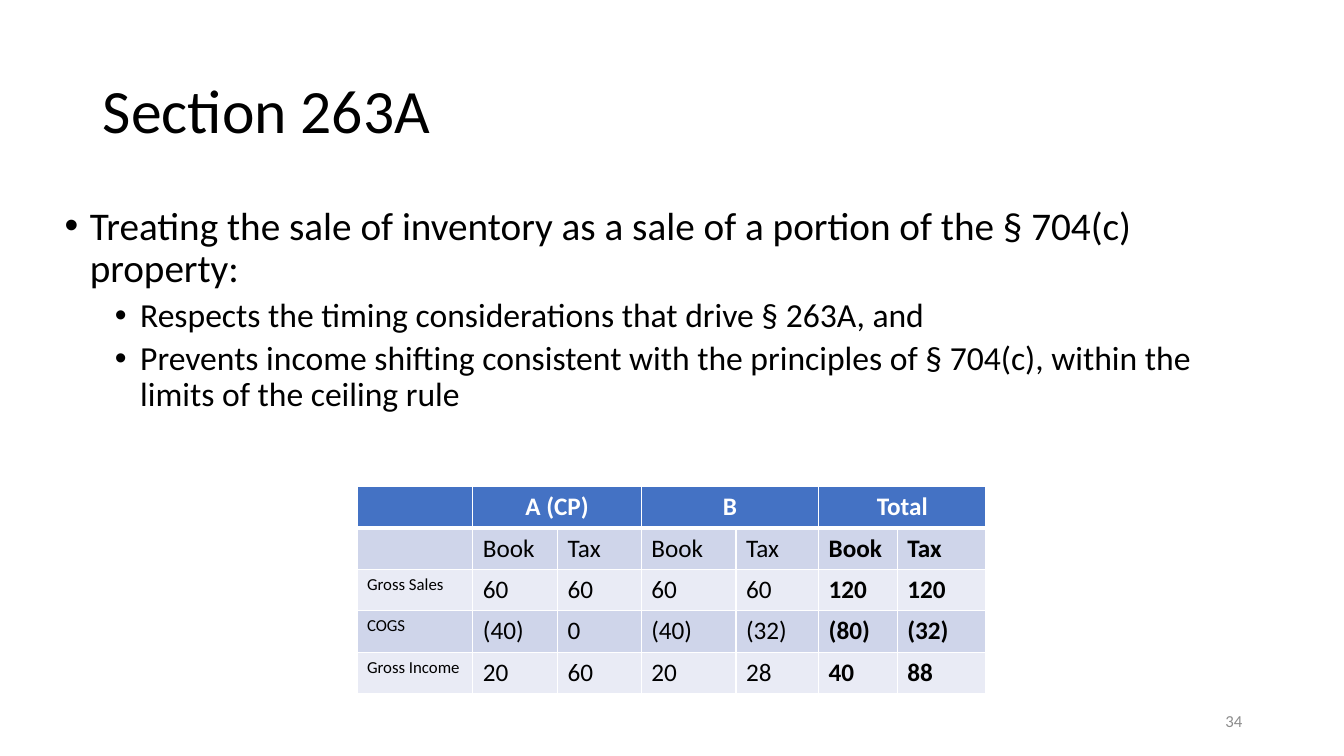
from dataclasses import dataclass

from lxml import etree
from pptx import Presentation
from pptx import util as u
from pptx.dml.color import RGBColor
from pptx.enum import text
from pptx.oxml import ns


@dataclass(frozen=True)
class Theme:
    font: str = "Calibri"
    ink: str = "000000"
    white: str = "FFFFFF"
    muted: str = "8C8C8C"
    header: str = "4472C4"
    bands: tuple = ("CFD5EA", "E9EBF5")
    title: int = 44
    levels: tuple = (28, 24)
    cell: int = 18
    small: int = 12


THEME = Theme()
ALIGN = text.PP_ALIGN

BULLETS = [
    (0, "Treating the sale of inventory as a sale of a portion of the § 704(c) property:"),
    (1, "Respects the timing considerations that drive § 263A, and"),
    (1, "Prevents income shifting consistent with the principles of § 704(c), "
        "within the limits of the ceiling rule"),
]
COLUMNS = [115, 84, 83, 94, 82, 78, 88]
ROW_HEIGHT = 41
ROWS = [
    ["", "A (CP)", "", "B", "", "Total", ""],
    ["", "Book", "Tax", "Book", "Tax", "Book", "Tax"],
    ["Gross Sales", "60", "60", "60", "60", "120", "120"],
    ["COGS", "(40)", "0", "(40)", "(32)", "(80)", "(32)"],
    ["Gross Income", "20", "60", "20", "28", "40", "88"],
]


def px(n):
    """Convert px, at 100 to the inch, into EMU."""
    return u.Emu(n * 9144)


def place(sp, left, top, width, height):
    sp.left, sp.top, sp.width, sp.height = map(px, (left, top, width, height))


def style(p, size, color=THEME.ink, bold=False, align=ALIGN.LEFT):
    p.alignment = align
    for r in p.runs:
        r.font.name = THEME.font
        r.font.size = u.Pt(size)
        r.font.bold = bold
        r.font.color.rgb = RGBColor.from_string(color)


def set_bullet(p, margin, hanging):
    pPr = p._p.get_or_add_pPr()
    pPr.set("marL", str(px(margin)))
    pPr.set("indent", str(px(-hanging)))
    etree.SubElement(pPr, ns.qn("a:buFont"), typeface="Arial")
    etree.SubElement(pPr, ns.qn("a:buChar"), char="•")


def add_title(s, words):
    sp = s.shapes.title
    place(sp, 92, 40, 1150, 145)
    tf = sp.text_frame
    tf.text = words
    tf.auto_size = text.MSO_AUTO_SIZE.NONE
    tf.vertical_anchor = text.MSO_ANCHOR.MIDDLE
    tf.paragraphs[0].line_spacing = 0.9
    style(tf.paragraphs[0], THEME.title)


def add_bullets(s, items):
    sp = s.placeholders[1]
    place(sp, 54, 200, 1188, 476)
    tf = sp.text_frame
    tf.text = "\n".join(words for _, words in items)
    tf.auto_size = text.MSO_AUTO_SIZE.NONE
    for p, (level, _) in zip(tf.paragraphs, items):
        p.level = level
        p.line_spacing = 0.9
        p.space_before = u.Pt(5 if level else 10)
        style(p, THEME.levels[level])
        set_bullet(p, 25 + 50 * level, 25)


def add_page_number(s, number):
    sp = s.shapes.add_textbox(px(942), px(695), px(300), px(40))
    tf = sp.text_frame
    tf.word_wrap = True
    tf.vertical_anchor = text.MSO_ANCHOR.MIDDLE
    tf.text = number
    style(tf.paragraphs[0], THEME.small, THEME.muted, align=ALIGN.RIGHT)


def set_borders(cell, top, bottom):
    tcPr = cell._tc.get_or_add_tcPr()
    for side, points in (("L", 1), ("R", 1), ("T", top), ("B", bottom)):
        ln = etree.SubElement(tcPr, ns.qn("a:ln" + side), w=str(u.Pt(points)))
        fill = etree.SubElement(ln, ns.qn("a:solidFill"))
        etree.SubElement(fill, ns.qn("a:srgbClr"), val=THEME.white)


def format_cell(cell, row, col):
    # The thick rule lies between the header and the first body row
    set_borders(cell, 3 if row == 1 else 1, 3 if row == 0 else 1)
    cell.fill.solid()
    fill = THEME.bands[(row - 1) % 2] if row else THEME.header
    cell.fill.fore_color.rgb = RGBColor.from_string(fill)
    p = cell.text_frame.paragraphs[0]
    if row == 0:
        style(p, THEME.cell, THEME.white, True, ALIGN.CENTER)
    else:
        style(p, THEME.cell if col else THEME.small, bold=col >= 5)


def add_book_tax_table(s, rows):
    frame = s.shapes.add_table(len(rows), len(COLUMNS), px(354), px(483),
                               px(sum(COLUMNS)), px(ROW_HEIGHT * len(rows)))
    table = frame.table
    for column, width in zip(table.columns, COLUMNS):
        column.width = px(width)
    for i, values in enumerate(rows):
        table.rows[i].height = px(ROW_HEIGHT)
        for j, value in enumerate(values):
            cell = table.cell(i, j)
            cell.text_frame.text = value
            format_cell(cell, i, j)
    # Each header group spans a Book and a Tax column
    for j in range(1, len(COLUMNS), 2):
        table.cell(0, j).merge(table.cell(0, j + 1))


def main():
    prs = Presentation()
    prs.slide_width, prs.slide_height = px(1333), px(750)
    s = prs.slides.add_slide(prs.slide_layouts[1])
    add_title(s, "Section 263A")
    add_bullets(s, BULLETS)
    add_page_number(s, "34")
    add_book_tax_table(s, ROWS)
    prs.save("out.pptx")


if __name__ == "__main__":
    main()
